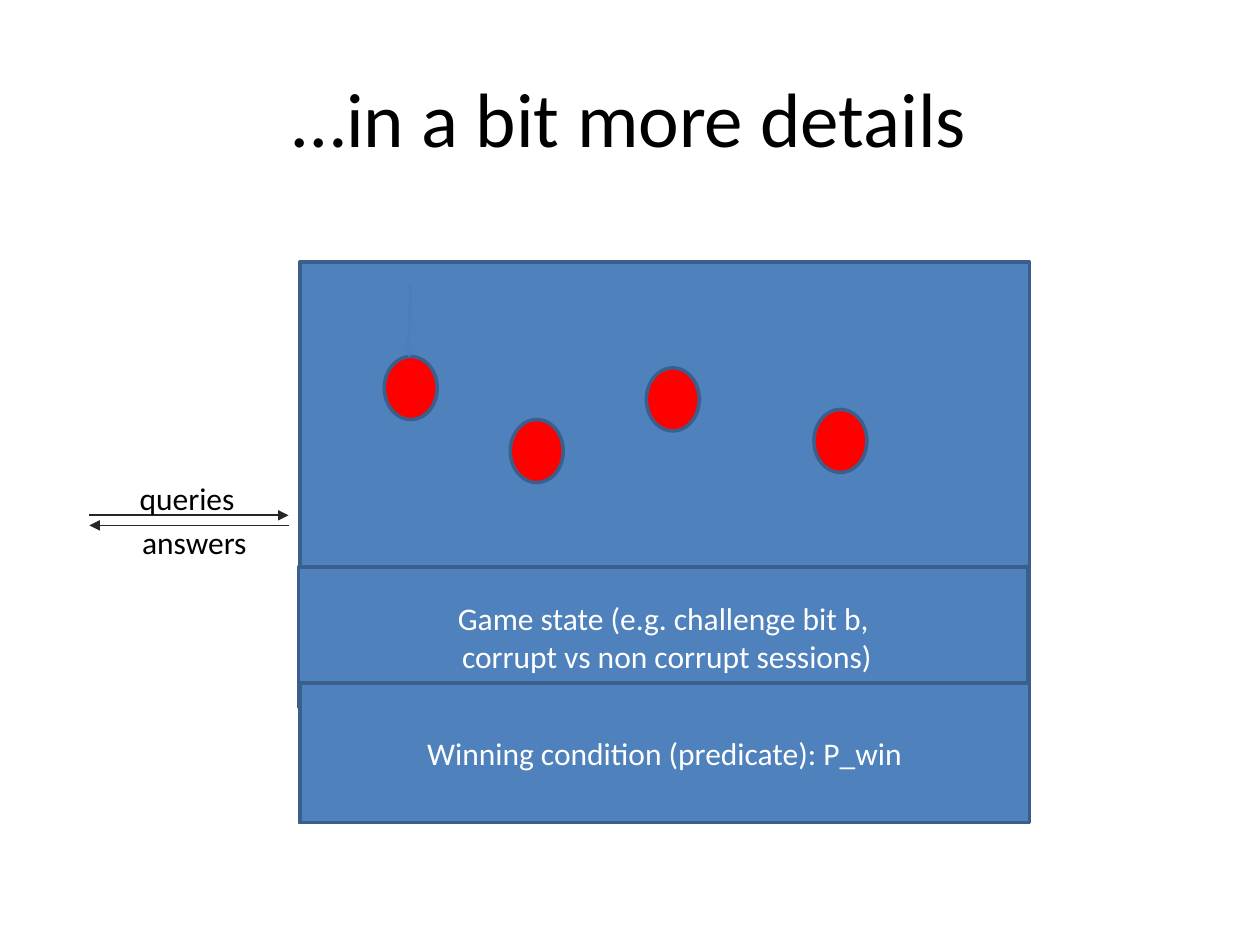
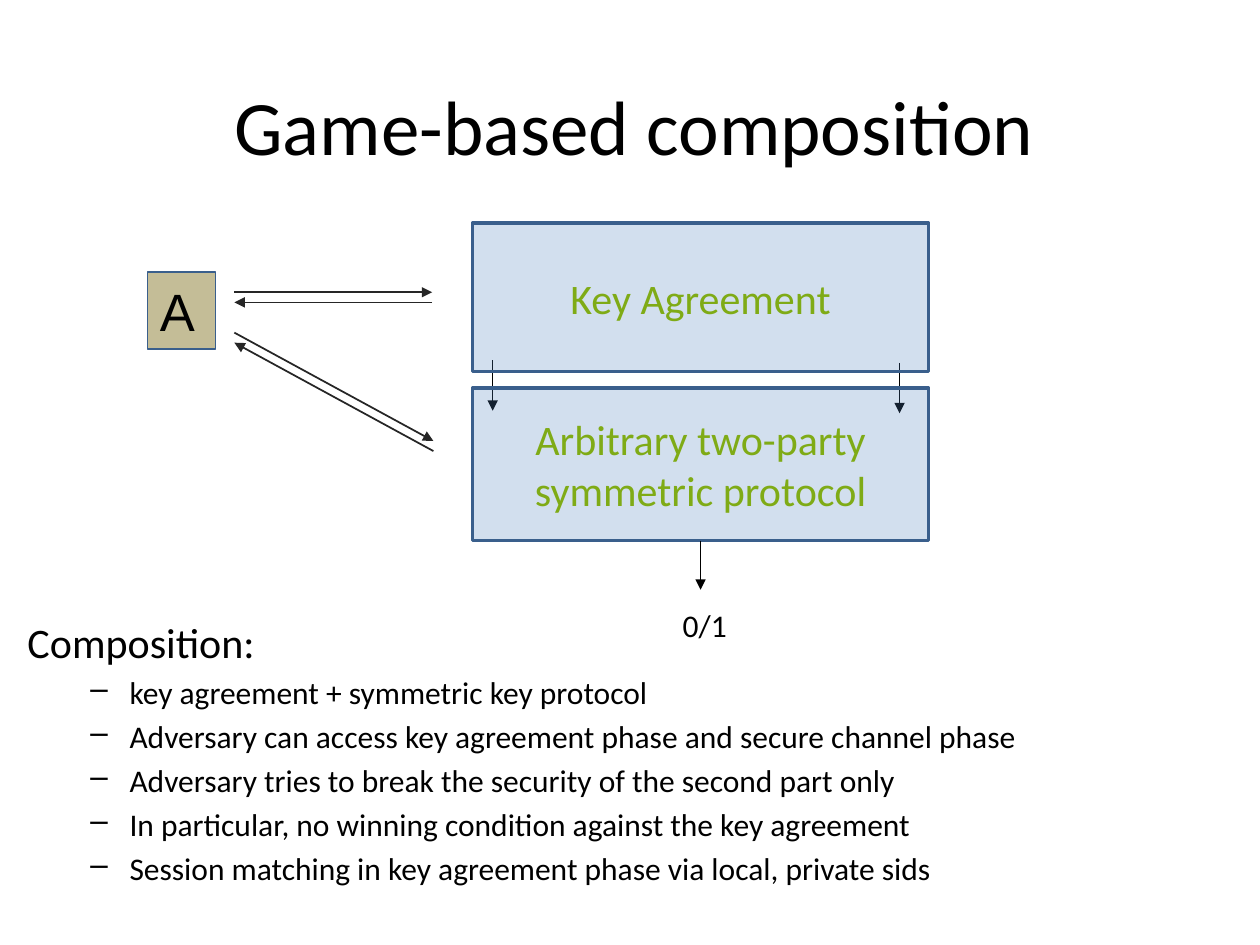
from lxml import etree
from pptx import Presentation
from pptx.dml.color import RGBColor
from pptx.enum.shapes import MSO_CONNECTOR, MSO_SHAPE
from pptx.enum.text import MSO_ANCHOR, PP_ALIGN
from pptx.oxml.ns import qn
from pptx.util import Inches, Pt

RECTANGLE, ELLIPSE = MSO_SHAPE.RECTANGLE, MSO_SHAPE.OVAL
STRAIGHT, CURVE = MSO_CONNECTOR.STRAIGHT, MSO_CONNECTOR.CURVE
LEFT, CENTER = PP_ALIGN.LEFT, PP_ALIGN.CENTER
MIDDLE = MSO_ANCHOR.MIDDLE

COLORS = {
    "blue": "4F81BD",
    "outline": "3A5F8C",
    "curve": "4B7EBC",
    "red": "FF0000",
    "tan": "C4BD97",
    "green": "7FAB16",
    "arrow": "262626",
    "black": "000000",
    "white": "FFFFFF",
}
TITLE_ONLY = 5
BOTTOM_SIDE = 2


def rgb(name):
    return RGBColor.from_string(COLORS[name])


class Deck:
    """Holds the shared style and the slide being filled."""

    font = "Calibri"

    def __init__(self):
        self.presentation = Presentation()
        self.presentation.slide_width = Inches(10)
        self.presentation.slide_height = Inches(7.5)
        self.slide = None

    def style(self, paragraph, size, color="black", align=LEFT, font=None):
        paragraph.alignment = align
        paragraph.font.name = font or self.font
        paragraph.font.size = Pt(size)
        paragraph.font.color.rgb = rgb(color)

    def new_slide(self, title, left, top, width, height):
        layout = self.presentation.slide_layouts[TITLE_ONLY]
        self.slide = self.presentation.slides.add_slide(layout)
        shape = self.slide.shapes.title
        shape.left, shape.top = Inches(left), Inches(top)
        shape.width, shape.height = Inches(width), Inches(height)
        shape.text_frame.text = title
        shape.text_frame.vertical_anchor = MIDDLE
        self.style(shape.text_frame.paragraphs[0], 44, align=CENTER)

    def shape(self, kind, left, top, width, height, fill="blue", line_width=2, opacity=None):
        shape = self.slide.shapes.add_shape(
            kind, Inches(left), Inches(top), Inches(width), Inches(height))
        shape.shadow.inherit = False
        shape.fill.solid()
        shape.fill.fore_color.rgb = rgb(fill)
        shape.line.color.rgb = rgb("outline")
        shape.line.width = Pt(line_width)
        if opacity is not None:
            color = shape._element.spPr.find(qn("a:solidFill"))[0]
            etree.SubElement(color, qn("a:alpha")).set("val", str(opacity * 1000))
        return shape

    def box(self, text, left, top, width, height, size, color="white", align=CENTER,
            font=None, wrap=True, **look):
        shape = self.shape(RECTANGLE, left, top, width, height, **look)
        frame = shape.text_frame
        frame.word_wrap = wrap
        frame.vertical_anchor = MIDDLE
        frame.text = text
        self.style(frame.paragraphs[0], size, color, align, font)
        return shape

    def text_frame(self, left, top, width, height, wrap=True):
        box = self.slide.shapes.add_textbox(
            Inches(left), Inches(top), Inches(width), Inches(height))
        box.text_frame.word_wrap = wrap
        return box.text_frame

    def label(self, text, left, top, width, wrap=True):
        frame = self.text_frame(left, top, width, 0.4, wrap)
        frame.text = text
        self.style(frame.paragraphs[0], 18)

    def outline(self, heading, points, left, top, width, height):
        """A heading followed by dashed points."""
        frame = self.text_frame(left, top, width, height)
        frame.text = heading
        self.style(frame.paragraphs[0], 24)
        frame.paragraphs[0].space_before = Pt(4.8)
        for point in points:
            paragraph = frame.add_paragraph()
            paragraph.text = point
            paragraph.level = 1
            paragraph.space_before = Pt(3.6)
            self.style(paragraph, 18)
            properties = paragraph._p.get_or_add_pPr()
            properties.set("marL", str(Inches(0.81)))
            properties.set("indent", str(Inches(-0.31)))
            etree.SubElement(properties, qn("a:buChar")).set("char", "–")
            # The bullet has to precede the default run properties.
            defaults = properties.find(qn("a:defRPr"))
            if defaults is not None:
                properties.append(defaults)

    def arrow(self, start, end, color="black", width=0.75, kind=STRAIGHT, head="triangle"):
        connector = self.slide.shapes.add_connector(
            kind, *(Inches(value) for value in (*start, *end)))
        connector.line.color.rgb = rgb(color)
        connector.line.width = Pt(width)
        etree.SubElement(connector.line._get_or_add_ln(), qn("a:tailEnd")).set("type", head)
        etree.SubElement(connector._element.spPr, qn("a:effectLst"))
        return connector

    def exchange(self, start, end, gap=0.08):
        """An arrow there and, just below it, an arrow back."""
        (x1, y1), (x2, y2) = start, end
        self.arrow((x2, y2 + gap), (x1, y1 + gap), "arrow", 1)
        self.arrow(start, end, "arrow", 1)


def add_details_slide(deck):
    deck.new_slide("…in a bit more details", 0.5, 0.3, 9, 1.25)
    deck.shape(RECTANGLE, 2.38, 2.08, 5.79, 4.45)
    for left, top in ((3.05, 2.83), (4.05, 3.33), (5.13, 2.92), (6.46, 3.25)):
        deck.shape(ELLIPSE, left, top, 0.42, 0.5, fill="red")
    deck.box("Game state (e.g. challenge bit b,\v corrupt vs non corrupt sessions)",
             2.37, 4.5, 5.79, 1.11, 18)
    deck.box("Winning condition (predicate): P_win", 2.38, 5.42, 5.79, 1.11, 18)

    session_start = deck.arrow((2.96, 2.54), (3.54, 2.55), "curve", 2, CURVE, "arrow")
    session_start._element.spPr.find(qn("a:xfrm")).set("rot", str(90 * 60000))

    deck.exchange((0.71, 4.09), (2.29, 4.09))
    deck.label("queries", 1.01, 3.75, 1.57)
    deck.label("answers", 1.03, 4.1, 1.57)


def add_composition_slide(deck):
    deck.new_slide("Game-based composition", 0.35, 0.53, 9.37, 0.92)
    deck.outline("Composition:", (
        "key agreement + symmetric key protocol",
        "Adversary can access key agreement phase and secure channel phase",
        "Adversary tries to break the security of the second part only",
        "In particular, no winning condition against the key agreement",
        "Session matching in key agreement phase via local, private sids",
    ), 0.12, 4.84, 10.63, 2.32)

    for x, y in ((7.14, 2.88), (3.91, 2.86)):
        deck.arrow((x, y), (x, y + 0.4))
    for text, top, height in (("Key Agreement", 1.77, 1.18),
                              ("Arbitrary two-party symmetric protocol", 3.08, 1.21)):
        protocol = deck.box(text, 3.75, top, 3.62, height, 24, "green", opacity=25)
    deck.box("A", 1.17, 2.16, 0.54, 0.61, 30, "black", LEFT, "Arial", wrap=False,
             fill="tan", line_width=0.75)

    deck.exchange((1.86, 2.32), (3.43, 2.32))
    deck.exchange((1.86, 2.64), (3.44, 3.5))
    result = deck.arrow((5.56, 4.29), (5.56, 4.68))
    result.begin_connect(protocol, BOTTOM_SIDE)
    deck.label("0/1", 5.32, 4.76, 0.55, wrap=False)


def main():
    deck = Deck()
    add_details_slide(deck)
    add_composition_slide(deck)
    deck.presentation.save("out.pptx")


if __name__ == "__main__":
    main()
